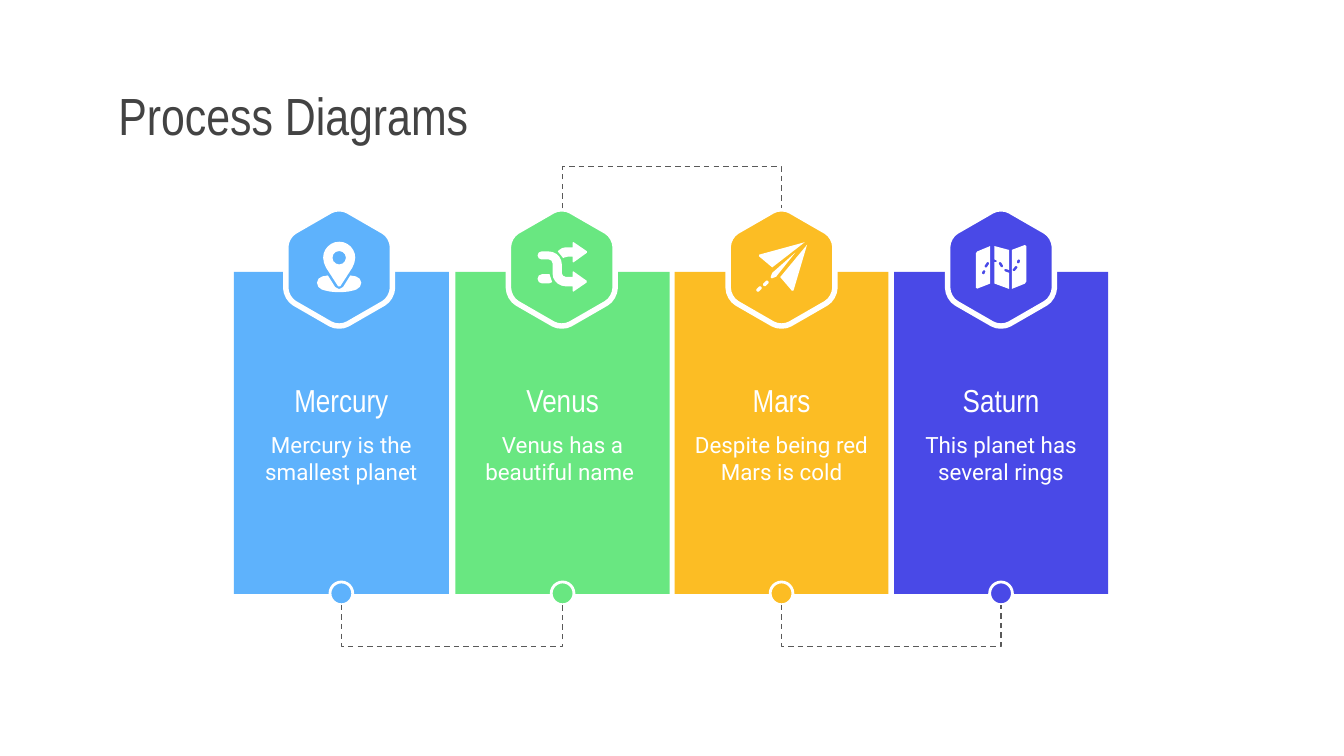
import math

from lxml import etree
from pptx import Presentation
from pptx.dml.color import RGBColor
from pptx.enum import dml, shapes, text
from pptx.oxml.ns import qn
from pptx.util import Pt

COLORS = {"blue": "5EB2FC", "green": "69E781", "yellow": "FCBD24", "indigo": "4949E7",
          "white": "FFFFFF", "title": "434343", "link": "595959"}
HEADING_FONT, BODY_FONT = "Arial Narrow", "Roboto"
CARD_TOP, CARD_HEIGHT = 145.6, 172.6
DOT_SIZE = 12.2
HEXAGON_RADIUS = 33


def dash(x1, y1, x2, y2, width=1.5):
    """Contour of a short bar with cut corners between two points."""
    length = math.hypot(x2 - x1, y2 - y1)
    dx, dy = (y2 - y1) / length * width / 2, (x1 - x2) / length * width / 2
    return [(x1 + dx, y1 + dy, 0.5), (x2 + dx, y2 + dy, 0.5),
            (x2 - dx, y2 - dy, 0.5), (x1 - dx, y1 - dy, 0.5)]


# An icon is a list of pieces, a piece a list of contours, a contour a list of
# corners (x, y, optional rounding) measured from the centre of the hexagon.
HEXAGON = [[(HEXAGON_RADIUS * math.sin(math.radians(angle)),
             -HEXAGON_RADIUS * math.cos(math.radians(angle)), 5.4)
            for angle in range(0, 360, 60)]]
PIN = [
    [[(-8.6, -13.8, 8.6), (8.6, -13.8, 8.6), (8.6, -2.3, 2.9), (0, 11, 1), (-8.6, -2.3, 2.9)],
     [(-3.6, -8.8, 3.6), (3.6, -8.8, 3.6), (3.6, -1.6, 3.6), (-3.6, -1.6, 3.6)]],
    [[(-6, 4.3), (-11.9, 5.3, 3), (-11.9, 11, 2.8), (-5, 13.2, 3), (5, 13.2, 3),
      (11.9, 11, 2.8), (11.9, 5.3, 3), (6, 4.3), (1.5, 11.5, 1.2), (-1.5, 11.5, 1.2)]],
]
SHUFFLE = [
    [[(-13, -8.6, 2.1), (0, -8.6, 7), (0, 5, 2), (5.8, 5), (5.8, 1.8, 0.5), (14, 7.6, 0.8),
      (5.8, 13.2, 0.5), (5.8, 10.1), (-5, 10.1, 7), (-5, -4.3, 2), (-13, -4.3, 2.1)]],
    [[(-13, 3.6, 2.4), (-6.6, 3.6), (-5.2, 7.9), (-7, 8.6), (-13, 8.6, 2.4)]],
    [[(-2.2, -8.6), (0, -10.8, 2), (5.8, -10.8), (5.8, -13.9, 0.5), (14, -8.3, 0.8),
      (5.8, -2.4, 0.5), (5.8, -5.8), (2.2, -5.8, 1), (0.7, -5)]],
]
PLANE = [
    [dash(-10.9, 10.4, -13.2, 12.7, 1.8)],
    [dash(-7.2, 7.4, -9.6, 9.7, 1.8)],
    [[(12.4, -13.5), (-12.9, -6.6, 1), (-5, 0)]],
    [[(13.7, -12.2), (-0.7, 5.2), (6.2, 13.2, 0.9)]],
    [[(7.4, -8), (-5, 2.9), (-6.2, 6.2, 1), (-2.9, 5)]],
]
MAP = [
    [[(-5.8, -11.5), (-13.5, -8.3, 0.8), (-13.5, 11.6, 0.8), (-5.8, 8.6)],
     dash(-6.7, -2.8, -8.5, -0.1), dash(-8.8, 1.5, -9.8, 3.6)],
    [[(-3.6, -11.5), (4.3, -9.4), (4.3, 1.4), (1.9, 0.5, 0.6), (1.5, 1.9, 0.6), (4.3, 2.9),
      (4.3, 11.5), (-3.6, 8.6), (-3.6, -2.9), (-2.4, -2.7, 0.4), (-2.2, -3.8, 0.4), (-3.6, -4.3)],
     dash(-0.9, -2.8, 0.8, -0.2)],
    [[(5.8, -9.4), (13.5, -12.3, 0.8), (13.5, 8.4, 0.8), (5.8, 11.5)],
     dash(9.8, -4.2, 8.9, -2.2), dash(8.5, -0.6, 6.5, 1.9)],
]

# name, description, color, icon, left, width, shift of the icon from the centre
CARDS = [
    ("Mercury", "Mercury is the smallest planet", "blue", PIN, 125.3, 115.2, -1.2),
    ("Venus", "Venus has a beautiful name ", "green", SHUFFLE, 244, 114.8, -0.4),
    ("Mars", "Despite being red Mars is cold", "yellow", PLANE, 361.4, 114.6, 0),
    ("Saturn", "This planet has several rings", "indigo", MAP, 479, 114.6, 0),
]


def rgb(color):
    return RGBColor.from_string(COLORS[color])


def paint(shape, fill, line=None, width=0):
    shape.shadow.inherit = False
    shape.fill.solid()
    shape.fill.fore_color.rgb = rgb(fill)
    if line:
        shape.line.color.rgb = rgb(line)
        shape.line.width = Pt(width)
    else:
        shape.line.fill.background()


def round_corners(contour):
    """Replace each rounded corner by points along a Bezier curve, few on a small one."""
    points = []
    for index, (x, y, *cut) in enumerate(contour):
        if not cut:
            points.append((x, y))
            continue
        ends = []
        for next_x, next_y, *_ in (contour[index - 1], contour[(index + 1) % len(contour)]):
            share = cut[0] / math.hypot(next_x - x, next_y - y)
            ends.append((x + (next_x - x) * share, y + (next_y - y) * share))
        steps = math.ceil(cut[0] * 0.65)
        for step in range(steps + 1):
            t = step / steps
            start = (1 - t) ** 3 + 1.35 * t * (1 - t) ** 2
            end = t ** 3 + 1.35 * t ** 2 * (1 - t)
            points.append(tuple(start * a + end * b + (1 - start - end) * corner
                                for a, b, corner in zip(*ends, (x, y))))
    return points


def add_outline(slide, contours, center_x, center_y):
    builder = None
    for contour in contours:
        points = [(Pt(center_x + x), Pt(center_y + y)) for x, y in round_corners(contour)]
        if builder is None:
            builder = slide.shapes.build_freeform(*points[0], scale=1.0)
        else:
            builder.move_to(*points[0])
        builder.add_line_segments(points[1:], close=True)
    return builder.convert_to_shape()


def style_text(shape, content, font, size, color, align):
    frame = shape.text_frame
    frame.text = content
    frame.word_wrap = True
    frame.vertical_anchor = text.MSO_ANCHOR.MIDDLE
    frame.margin_left = frame.margin_right = frame.margin_top = frame.margin_bottom = Pt(7.2)
    paragraph = frame.paragraphs[0]
    paragraph.alignment = align
    run_font = paragraph.runs[0].font
    run_font.name, run_font.size = font, Pt(size)
    run_font.color.rgb = rgb(color)


def add_title(slide, content, left, top, width, height):
    title = slide.shapes.title
    title.left, title.top, title.width, title.height = map(Pt, (left, top, width, height))
    style_text(title, content, HEADING_FONT, 28, "title", text.PP_ALIGN.LEFT)


def add_card(slide, name, description, color, icon, icon_shift, left, top, width, height):
    center_x = left + width / 2
    panel = slide.shapes.add_shape(shapes.MSO_SHAPE.RECTANGLE,
                                   Pt(left), Pt(top), Pt(width), Pt(height))
    paint(panel, color)

    icon_center = center_x + icon_shift, top - 2.3
    paint(add_outline(slide, HEXAGON, *icon_center), color, "white", 2.93)
    for piece in icon:
        paint(add_outline(slide, piece, *icon_center), "white")

    for content, offset, box_height, font, size in (
            (description, 79, 41.8, BODY_FONT, 12), (name, 51.7, 33.8, HEADING_FONT, 17)):
        box = slide.shapes.add_textbox(Pt(left), Pt(top + offset), Pt(width), Pt(box_height))
        style_text(box, content, font, size, "white", text.PP_ALIGN.CENTER)

    dot = slide.shapes.add_shape(
        shapes.MSO_SHAPE.OVAL, Pt(center_x - DOT_SIZE / 2), Pt(top + height - 0.3 - DOT_SIZE / 2),
        Pt(DOT_SIZE), Pt(DOT_SIZE))
    paint(dot, color, "white", 1.5)


def add_link(slide, start_x, end_x, y, below, depth=18.75):
    """Dashed elbow bracket: a thin upright connector, turned and bent out by depth."""
    thickness = 1 / 21
    middle, half = (start_x + end_x) / 2, (end_x - start_x) / 2
    link = slide.shapes.add_connector(
        shapes.MSO_CONNECTOR.ELBOW, Pt(middle - thickness / 2), Pt(y - half),
        Pt(middle + thickness / 2), Pt(y + half))
    link.line.color.rgb = rgb("link")
    link.line.width = Pt(0.75)
    link.line.dash_style = dml.MSO_LINE.DASH
    properties = link._element.spPr
    etree.SubElement(properties, qn("a:effectLst"))
    transform = properties.find(qn("a:xfrm"))
    transform.set("rot", str(270 * 60000))
    if below:
        transform.set("flipH", "1")
    adjustments = properties.find(qn("a:prstGeom")).find(qn("a:avLst"))
    etree.SubElement(adjustments, qn("a:gd"), name="adj1",
                     fmla=f"val {round(depth / thickness * 100000)}")


def main():
    presentation = Presentation()
    presentation.slide_width, presentation.slide_height = Pt(720), Pt(405)
    slide = presentation.slides.add_slide(presentation.slide_layouts[5])
    add_title(slide, "Process Diagrams", 56.2, 42.5, 608.4, 38.2)
    for name, description, color, icon, left, width, icon_shift in CARDS:
        add_card(slide, name, description, color, icon, icon_shift,
                 left, CARD_TOP, width, CARD_HEIGHT)
    centers = [left + width / 2 for *_, left, width, _ in CARDS]
    for index, (start_x, end_x) in enumerate(zip(centers, centers[1:])):
        below = index % 2 == 0
        add_link(slide, start_x, end_x, 324 if below else 111.6, below)
    presentation.save("out.pptx")


if __name__ == "__main__":
    main()
